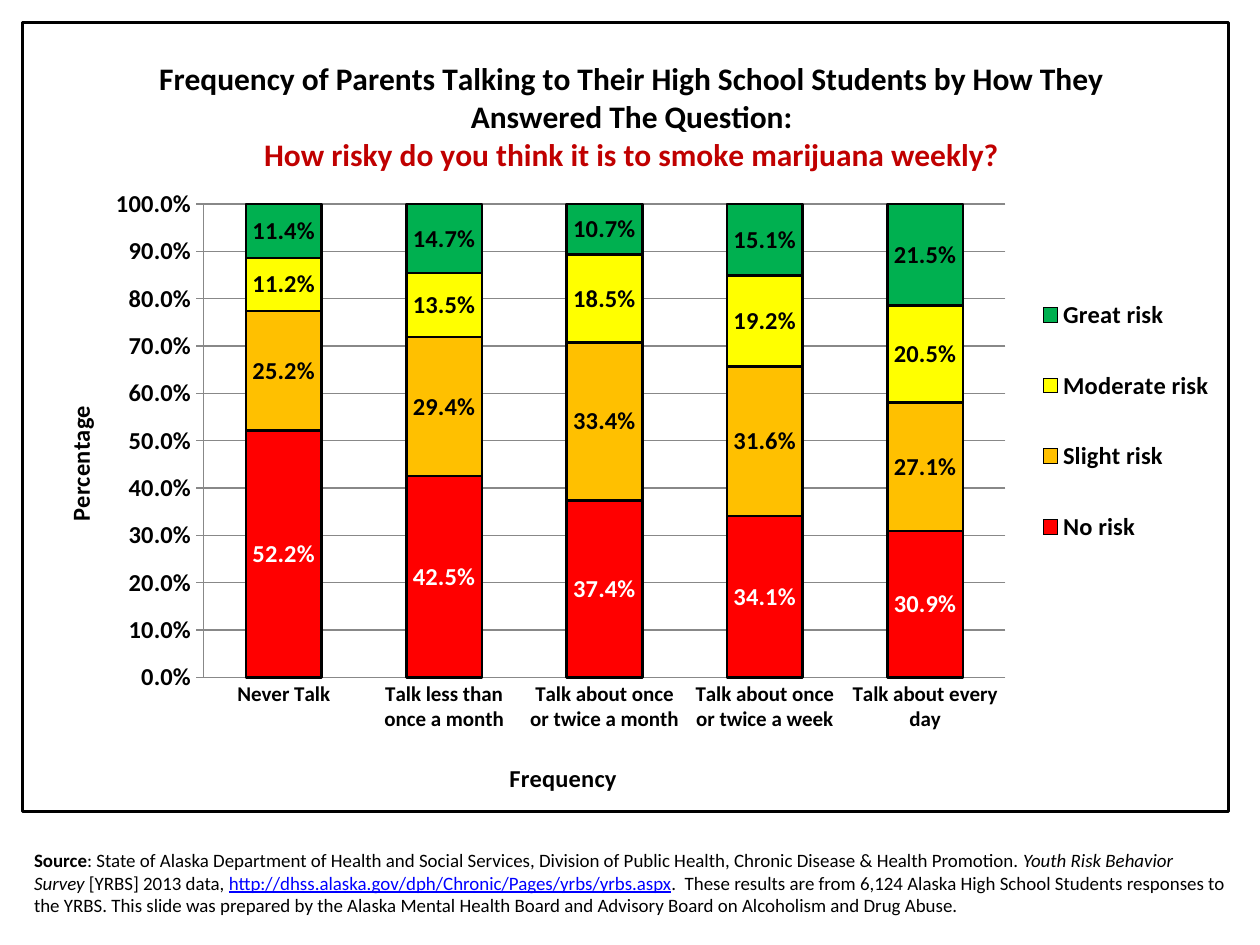
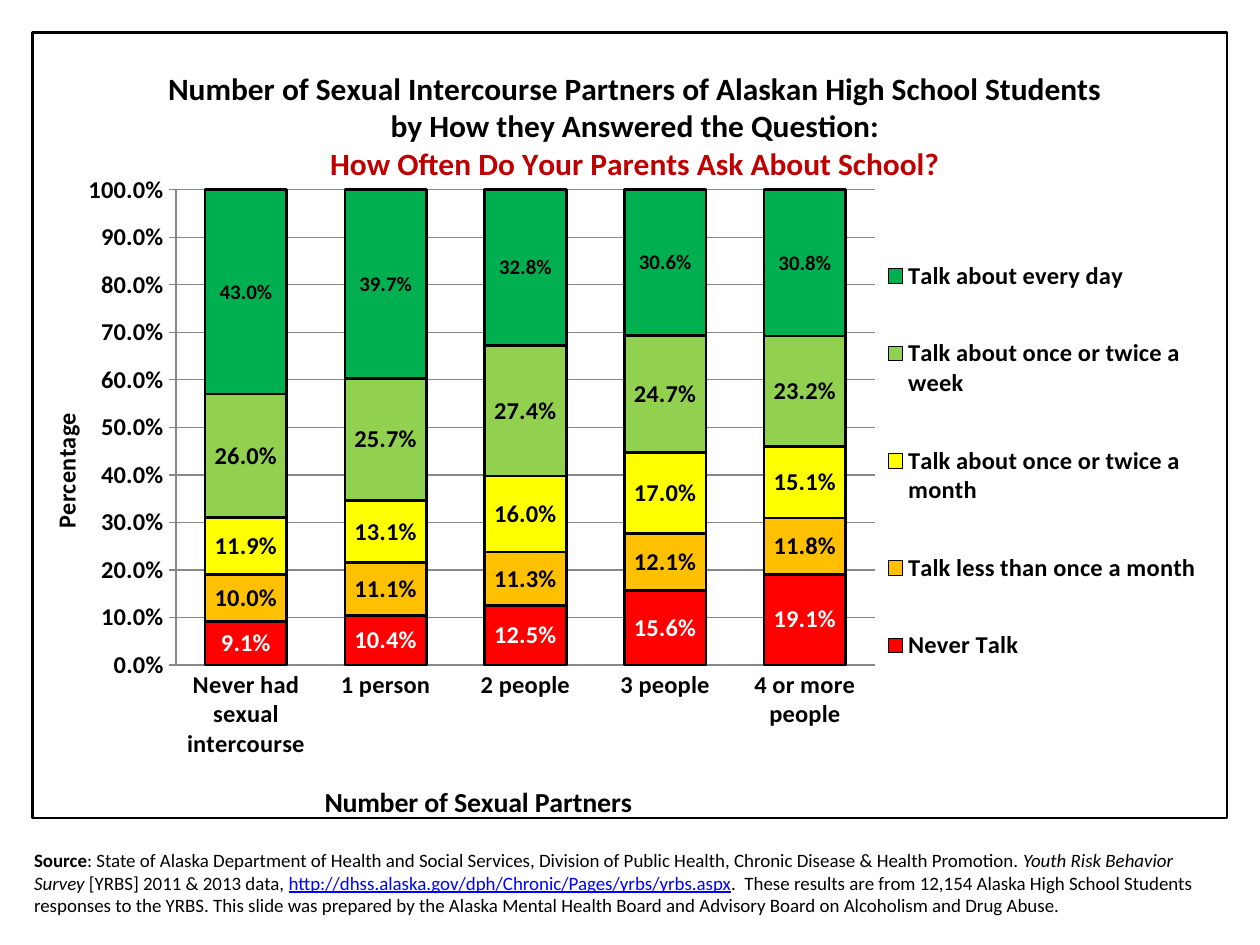
from pptx import Presentation
from pptx.chart.data import CategoryChartData
from pptx.dml.color import RGBColor
from pptx.enum.chart import (XL_CHART_TYPE as ChartType, XL_LABEL_POSITION as LabelPosition,
                             XL_LEGEND_POSITION as LegendPosition, XL_TICK_MARK as TickMark)
from pptx.enum.text import MSO_ANCHOR as Anchor, MSO_AUTO_SIZE as AutoSize, PP_ALIGN as Align
from pptx.oxml import parse_xml
from pptx.oxml.ns import nsdecls, qn
from pptx.util import Inches, Pt

# Shared style
FONT = "Calibri"
BLACK, WHITE, GRID = "000000", "FFFFFF", "888888"
QUESTION, LINK = "C00000", "0000FF"
RED, ORANGE, YELLOW, LIME, GREEN = "FF0000", "FFC000", "FFFF00", "92D050", "00B050"
PERCENT = "0.0%"
SOURCE_URL = "http://dhss.alaska.gov/dph/Chronic/Pages/yrbs/yrbs.aspx"
TITLE_ONLY = 5


def color(value):
    return RGBColor.from_string(value)


def style_font(font, size, hue=BLACK, bold=True):
    font.name, font.size, font.bold = FONT, Pt(size), bold
    font.color.rgb = color(hue)


def style_line(line, hue=BLACK, width=1.5):
    line.color.rgb = color(hue)
    line.width = Pt(width)


def place(part, index, x, y, width=None, height=None, inner=False):
    """Place a chart part by shares of the chart's size."""
    for old in part.findall(qn("c:layout")):
        part.remove(old)
    target = '<c:layoutTarget val="inner"/>' if inner else ""
    modes = '<c:xMode val="edge"/><c:yMode val="edge"/>'
    values = {"x": x, "y": y, "w": width, "h": height}
    sizes = "".join(f'<c:{key} val="{value}"/>' for key, value in values.items()
                    if value is not None)
    part.insert(index, parse_xml(
        f'<c:layout {nsdecls("c")}><c:manualLayout>{target}{modes}{sizes}'
        '</c:manualLayout></c:layout>'))


class SurveyDeck:
    def __init__(self):
        self.deck = Presentation()
        self.deck.slide_width, self.deck.slide_height = Inches(10), Inches(7.5)
        self.page = None

    def new_page(self):
        self.page = self.deck.slides.add_slide(self.deck.slide_layouts[TITLE_ONLY])

    def source(self, years, responses):
        box = self.page.shapes.title
        box.left, box.top = Inches(0.17), Inches(6.67)
        box.width, box.height = Inches(9.67), Inches(0.67)
        frame = box.text_frame
        frame.auto_size, frame.word_wrap = AutoSize.NONE, True
        frame.vertical_anchor = Anchor.MIDDLE
        para = frame.paragraphs[0]
        para.alignment = Align.LEFT
        parts = [
            ("Source", "bold"),
            (": State of Alaska Department of Health and Social Services, Division of Public "
             "Health, Chronic Disease & Health Promotion. ", ""),
            ("Youth Risk Behavior Survey", "italic"),
            (f" [YRBS] {years} data, ", ""),
            (SOURCE_URL, "link"),
            (f".\u00a0 These results are from {responses} Alaska High School Students responses "
             "to the YRBS. This slide was prepared by the Alaska Mental Health Board and "
             "Advisory Board on Alcoholism and Drug Abuse.", ""),
        ]
        for text, look in parts:
            span = para.add_run()
            span.text = text
            style_font(span.font, 10.8, LINK if look == "link" else BLACK, look == "bold")
            span.font.italic = look == "italic"
            span.font.underline = look == "link"

    def chart(self, frame, categories, series, gap, plot_area):
        data = CategoryChartData(number_format=PERCENT)
        data.categories = categories
        for name, values, *_ in series:
            data.add_series(name, values)
        chart = self.page.shapes.add_chart(
            ChartType.COLUMN_STACKED, *map(Inches, frame), data).chart
        style_font(chart.font, 10, bold=False)
        self.border(chart)

        # Stacked columns and their labels
        plot = chart.plots[0]
        plot.gap_width, plot.overlap, plot.vary_by_categories = gap, 100, False
        for column, (_, _, fill, label_color, label_size) in zip(plot.series, series):
            column.format.fill.solid()
            column.format.fill.fore_color.rgb = color(fill)
            style_line(column.format.line)
            labels = column.data_labels
            labels.show_value, labels.position = True, LabelPosition.CENTER
            labels.number_format, labels.number_format_is_linked = PERCENT, False
            style_font(labels.font, label_size, label_color)
        place(chart._chartSpace.chart.plotArea, 0, *plot_area, inner=True)
        return chart

    def border(self, chart):
        chart._chartSpace.chart.addnext(parse_xml(
            f'<c:spPr {nsdecls("c", "a")}><a:solidFill><a:srgbClr val="{WHITE}"/></a:solidFill>'
            f'<a:ln w="{Pt(1.5)}"><a:solidFill><a:srgbClr val="{BLACK}"/></a:solidFill></a:ln>'
            '</c:spPr>'))

    def heading(self, owner, lines, size, spot):
        """Give a chart or an axis its title; a second line is the question."""
        title = owner.chart_title if hasattr(owner, "chart_title") else owner.axis_title
        frame = title.text_frame
        frame.text = "\n".join(lines)
        for para, hue in zip(frame.paragraphs, (BLACK, QUESTION)):
            style_font(para.runs[0].font, size, hue)
        place(title._element, 1, *spot)
        return frame

    def axes(self, chart, category_title, category_spot, value_spot, title_size, tick_size):
        category, value = chart.category_axis, chart.value_axis
        category.major_tick_mark, value.major_tick_mark = TickMark.NONE, TickMark.OUTSIDE
        for axis, size in ((category, tick_size), (value, 14)):
            axis.minor_tick_mark = TickMark.NONE
            style_font(axis.tick_labels.font, size)
            style_line(axis.format.line, GRID, 0.75)
        value.minimum_scale, value.maximum_scale, value.major_unit = 0, 1, 0.1
        value.tick_labels.number_format = PERCENT
        value.tick_labels.number_format_is_linked = False
        value.has_major_gridlines = True
        style_line(value.major_gridlines.format.line, GRID, 0.75)
        self.heading(category, [category_title], title_size, category_spot)
        frame = self.heading(value, ["Percentage"], 14, value_spot)
        body = frame._txBody.find(qn("a:bodyPr"))
        body.set("rot", "-5400000")
        body.set("vert", "horz")

    def legend(self, chart, area):
        chart.has_legend = True
        chart.legend.position = LegendPosition.RIGHT
        chart.legend.include_in_layout = False
        style_font(chart.legend.font, 14)
        place(chart.legend._element, 1, *area)


def main():
    survey = SurveyDeck()
    never, rarely, monthly, weekly, daily = talk = [
        "Never Talk", "Talk less than once a month", "Talk about once or twice a month",
        "Talk about once or twice a week", "Talk about every day"]

    # Slide 1: perceived risk by how often parents talk
    survey.new_page()
    survey.source("2013", "6,124")
    chart = survey.chart(
        (0.17, 0.17, 9.59, 6.28), talk,
        [("No risk", (0.522, 0.425, 0.374, 0.341, 0.309), RED, WHITE, 14),
         ("Slight risk", (0.252, 0.294, 0.334, 0.316, 0.271), ORANGE, BLACK, 14),
         ("Moderate risk", (0.112, 0.135, 0.185, 0.192, 0.205), YELLOW, BLACK, 14),
         ("Great risk", (0.114, 0.147, 0.107, 0.151, 0.215), GREEN, BLACK, 14)],
        gap=112, plot_area=(0.15, 0.23, 0.665, 0.6))
    survey.heading(chart, [
        "Frequency of Parents Talking to Their High School Students by How They "
        "Answered The Question:",
        "How risky do you think it is to smoke marijuana weekly?"], 18, (0.11, 0.04))
    survey.axes(chart, "Frequency", (0.4, 0.93), (0.03, 0.48), title_size=14, tick_size=12)
    survey.legend(chart, (0.84, 0.3, 0.15, 0.41))

    # Slide 2: how often parents ask by number of partners
    survey.new_page()
    survey.source("2011 & 2013", "12,154")
    chart = survey.chart(
        (0.25, 0.25, 9.5, 6.33),
        ["Never had sexual intercourse", "1 person", "2 people", "3 people", "4 or more people"],
        [(never, (0.091, 0.104, 0.125, 0.156, 0.191), RED, WHITE, 14),
         (rarely, (0.1, 0.111, 0.113, 0.121, 0.118), ORANGE, BLACK, 14),
         (monthly, (0.119, 0.131, 0.16, 0.17, 0.151), YELLOW, BLACK, 14),
         (weekly, (0.26, 0.257, 0.274, 0.247, 0.232), LIME, BLACK, 14),
         (daily, (0.43, 0.397, 0.328, 0.306, 0.308), GREEN, BLACK, 12)],
        gap=71, plot_area=(0.12, 0.2, 0.585, 0.605))
    survey.heading(chart, [
        "Number of Sexual Intercourse Partners of Alaskan High School Students "
        "by How they Answered the Question:",
        "How Often Do Your Parents Ask About School?"], 18, (0.11, 0.04))
    survey.axes(chart, "Number of Sexual Partners", (0.24, 0.95), (0.01, 0.48),
                title_size=16, tick_size=14)
    survey.legend(chart, (0.71, 0.23, 0.27, 0.63))

    survey.deck.save("out.pptx")


if __name__ == "__main__":
    main()
